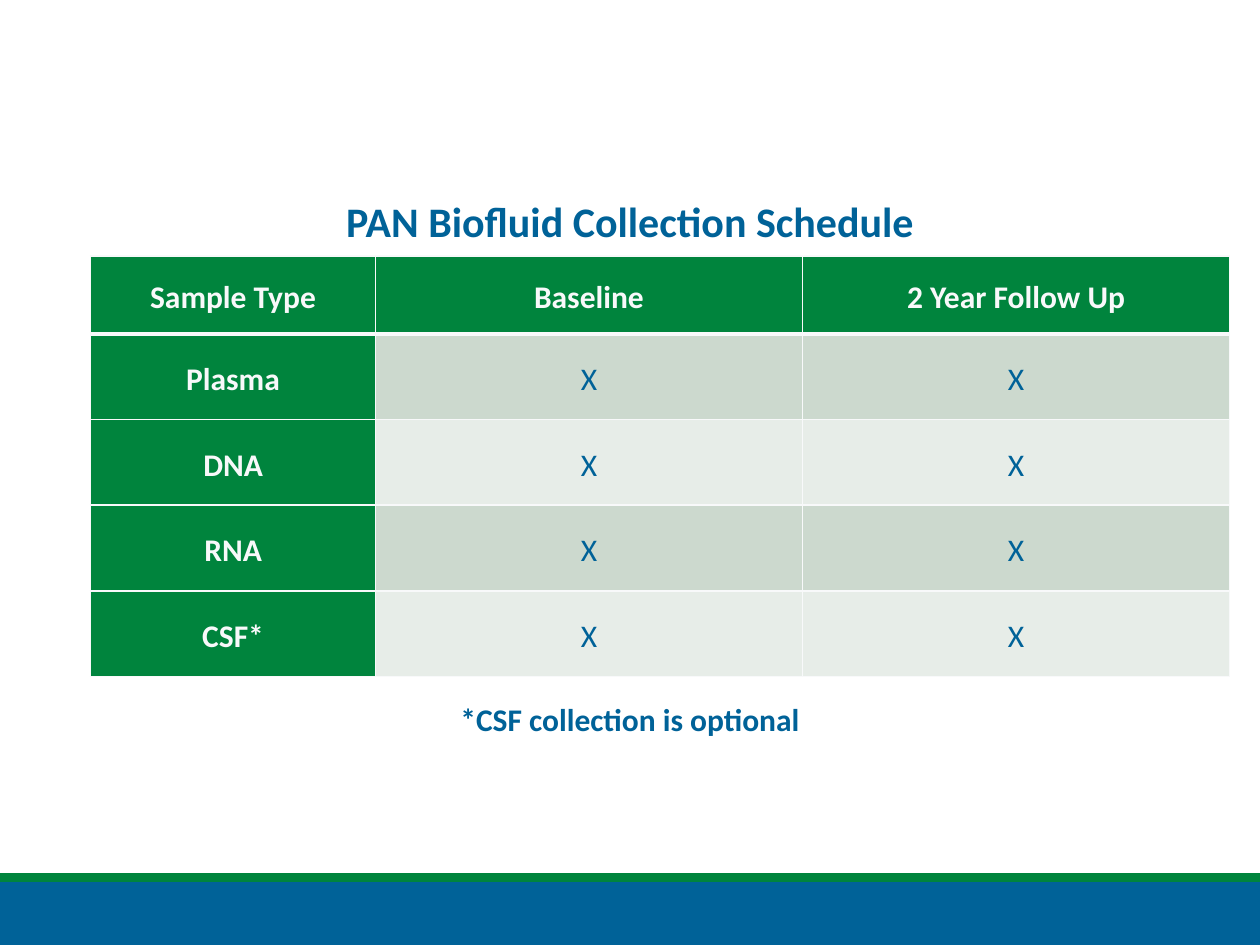
"""Build the biofluid collection schedule slide."""
from lxml import etree
from pptx import Presentation
from pptx.dml.color import RGBColor
from pptx.enum.shapes import MSO_SHAPE
from pptx.enum.text import MSO_ANCHOR, PP_ALIGN
from pptx.oxml.ns import qn
from pptx.util import Inches, Pt

RECTANGLE = MSO_SHAPE.RECTANGLE
MIDDLE = MSO_ANCHOR.MIDDLE
CENTER = PP_ALIGN.CENTER

BLUE = RGBColor(0x00, 0x62, 0x98)
GREEN = RGBColor(0x00, 0x84, 0x3D)
OFF_WHITE = RGBColor(0xF8, 0xF9, 0xFA)
BANDS = (RGBColor(0xCC, 0xD9, 0xCE), RGBColor(0xE7, 0xED, 0xE8))

ROWS = [
    ("Sample Type", "Baseline", "2 Year Follow Up"),
    ("Plasma", "X", "X"),
    ("DNA", "X", "X"),
    ("RNA", "X", "X"),
    ("CSF*", "X", "X"),
]
COLUMN_WIDTHS = (2.26, 3.39, 3.39)
ROW_HEIGHTS = (0.62, 0.68, 0.68, 0.68, 0.68)
TABLE_LEFT, TABLE_TOP = 0.72, 2.03

CAPTIONS = [
    ("PAN Biofluid Collection Schedule", 1.1, 24),
    ("*CSF collection is optional", 5.05, 18),
]
FOOTER_BARS = [(7, 0.5, BLUE), (6.93, 0.07, GREEN)]


def write_text(frame, text, size, color, bold, line_spacing):
    paragraph = frame.paragraphs[0]
    paragraph.alignment = CENTER
    paragraph.line_spacing = line_spacing
    run = paragraph.add_run()
    run.text = text
    font_format = {"name": "Calibri", "size": Pt(size), "bold": bold}
    for name, value in font_format.items():
        setattr(run.font, name, value)
    run.font.color.rgb = color


def add_footer_bar(slide, top, height, color):
    bar = slide.shapes.add_shape(
        RECTANGLE, 0, Inches(top), Inches(10), Inches(height))
    bar.shadow.inherit = False
    bar.fill.solid()
    bar.fill.fore_color.rgb = color
    bar.line.fill.background()


def add_caption(slide, text, top, size):
    box = slide.shapes.add_textbox(
        Inches(0.24), Inches(top), Inches(9.52), Inches(1.35))
    box.text_frame.word_wrap = True
    box.text_frame.vertical_anchor = MIDDLE
    write_text(box.text_frame, text, size, BLUE, True, 0.9)


def set_borders(cell, widths):
    properties = cell._tc.get_or_add_tcPr()
    for index, (side, width) in enumerate(widths.items()):
        line = etree.Element(qn(f"a:ln{side}"), w=str(Pt(width)))
        fill = etree.SubElement(line, qn("a:solidFill"))
        etree.SubElement(fill, qn("a:srgbClr"), val=str(OFF_WHITE))
        properties.insert(index, line)


def format_cell(cell, text, row, column):
    is_header = row == 0 or column == 0
    cell_format = {
        "vertical_anchor": MIDDLE,
        "margin_left": Inches(0.07),
        "margin_right": Inches(0.07),
        "margin_top": 0,
        "margin_bottom": 0,
    }
    for name, value in cell_format.items():
        setattr(cell, name, value)
    cell.fill.solid()
    cell.fill.fore_color.rgb = GREEN if is_header else BANDS[(row - 1) % 2]
    set_borders(cell, {
        "L": 1,
        "R": 1,
        "T": 3 if row == 1 else 1,
        "B": 3 if row == 0 else 1,
    })
    color = OFF_WHITE if is_header else BLUE
    write_text(cell.text_frame, text, 18, color, is_header, 1.15)


def add_schedule(slide):
    table = slide.shapes.add_table(
        len(ROWS), len(COLUMN_WIDTHS), Inches(TABLE_LEFT), Inches(TABLE_TOP),
        Inches(sum(COLUMN_WIDTHS)), Inches(sum(ROW_HEIGHTS))).table
    table.first_col = True
    for column, width in zip(table.columns, COLUMN_WIDTHS):
        column.width = Inches(width)
    for row, height in zip(table.rows, ROW_HEIGHTS):
        row.height = Inches(height)
    for row, texts in enumerate(ROWS):
        for column, text in enumerate(texts):
            format_cell(table.cell(row, column), text, row, column)


def main():
    presentation = Presentation()
    presentation.slide_width = Inches(10)
    presentation.slide_height = Inches(7.5)
    slide = presentation.slides.add_slide(presentation.slide_layouts[6])
    for bar in FOOTER_BARS:
        add_footer_bar(slide, *bar)
    title, footnote = CAPTIONS
    add_caption(slide, *title)
    add_schedule(slide)
    add_caption(slide, *footnote)
    presentation.save("out.pptx")


if __name__ == "__main__":
    main()
